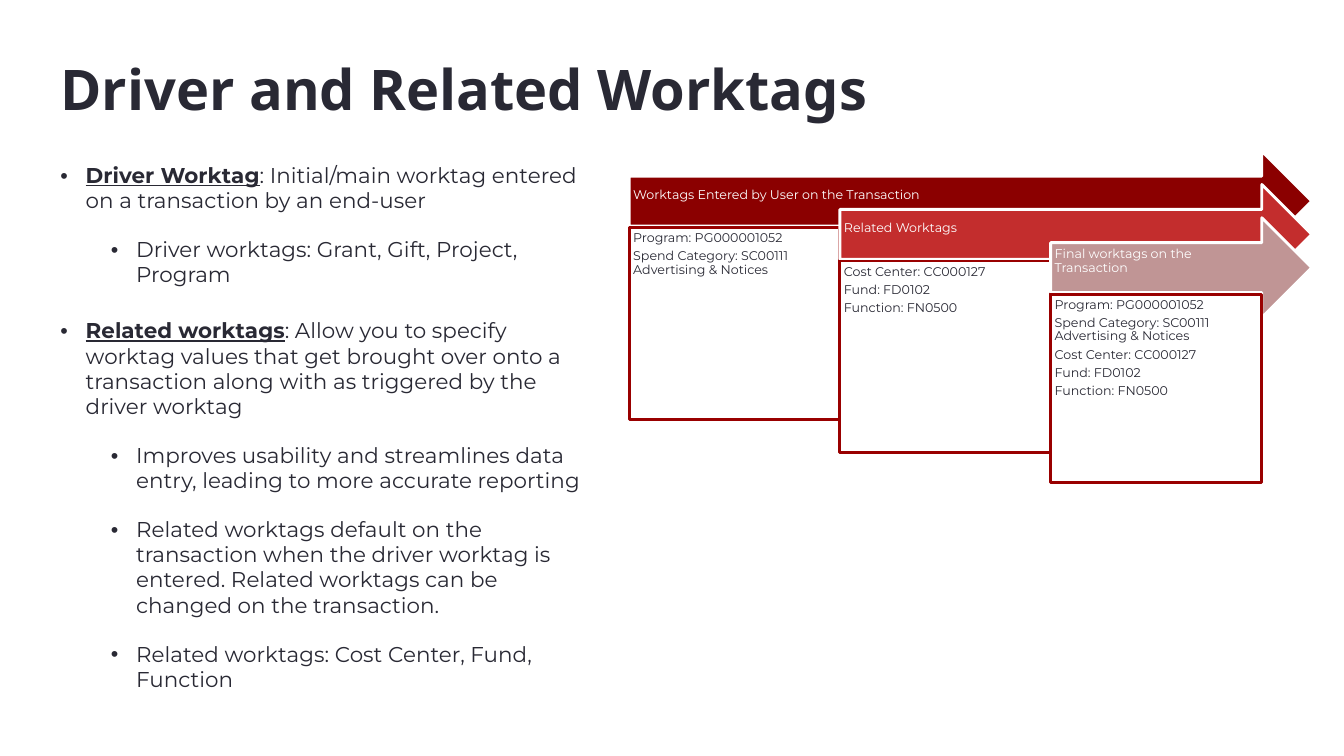
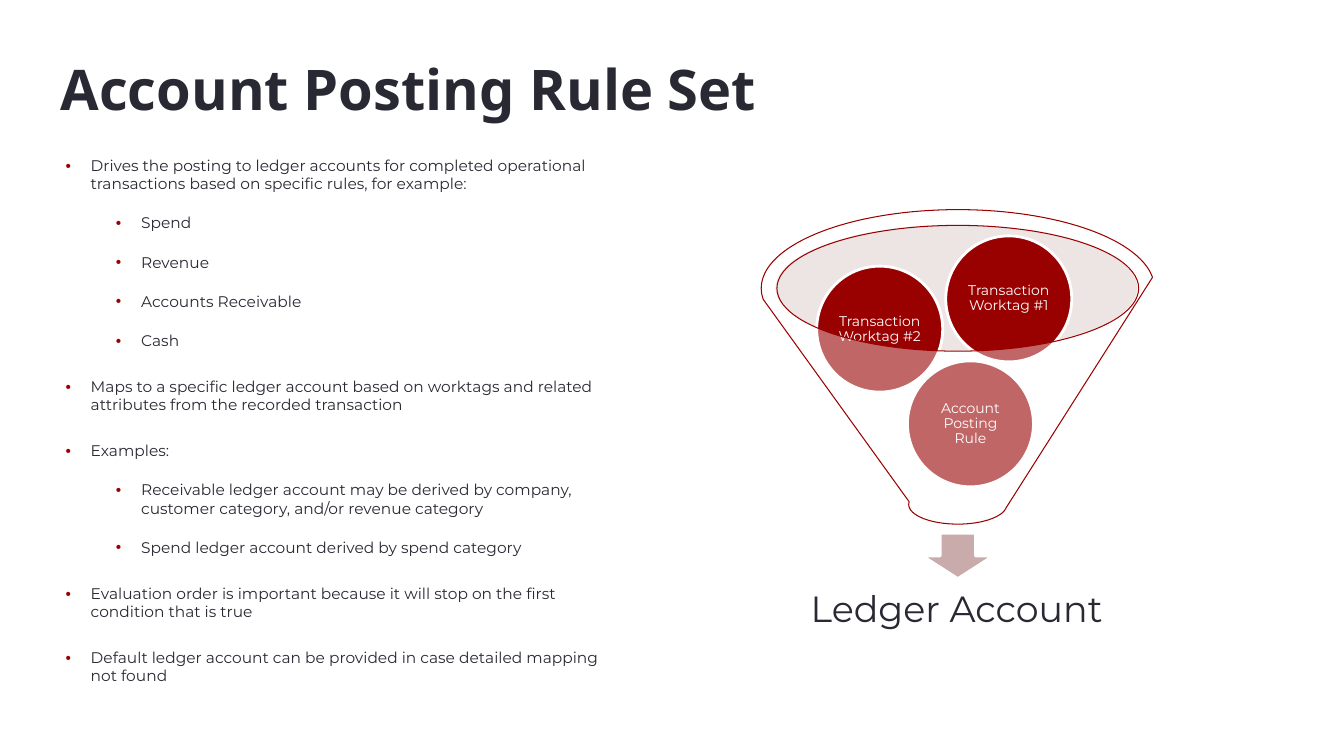
from lxml import etree
from pptx import Presentation
from pptx.dml.color import RGBColor
from pptx.enum.shapes import MSO_SHAPE
from pptx.enum.text import MSO_ANCHOR, MSO_AUTO_SIZE, PP_ALIGN
from pptx.oxml.ns import qn
from pptx.util import Inches, Pt

RECTANGLE, ELLIPSE = MSO_SHAPE.RECTANGLE, MSO_SHAPE.OVAL
RIGHT_ARROW, DOWN_ARROW = MSO_SHAPE.RIGHT_ARROW, MSO_SHAPE.DOWN_ARROW
FUNNEL = MSO_SHAPE.FUNNEL
TOP, MIDDLE = MSO_ANCHOR.TOP, MSO_ANCHOR.MIDDLE
LEFT, CENTER = PP_ALIGN.LEFT, PP_ALIGN.CENTER
NO_AUTOFIT = MSO_AUTO_SIZE.NONE
TITLE_LAYOUT = 1

COLORS = {
    "ink": "292934",
    "white": "FFFFFF",
    "red": "990000",
    "dark_red": "8B0000",
    "bright_red": "C32D2D",
    "dusty_red": "C09595",
    "pale_red": "CAABAB",
    "rim": "D4BDBD",
}
TITLE_FONT, BODY_FONT = "Noto Sans", "Montserrat"

WORKTAG_POINTS = [  # level, underlined lead, text
    (0, "Driver Worktag", ": Initial/main worktag entered on a transaction by an end-user"),
    (1, "", "Driver worktags: Grant, Gift, Project, Program"),
    (0, "Related worktags", ": Allow you to specify worktag values that get brought over onto "
        "a transaction along with as triggered by the driver worktag"),
    (1, "", "Improves usability and streamlines data entry, leading to more accurate reporting"),
    (1, "", "Related worktags default on the transaction when the driver worktag is entered. "
        "Related worktags can be changed on the transaction."),
    (1, "", "Related worktags: Cost Center, Fund, Function"),
]
USER_TAGS = ["Program: PG000001052", "Spend Category: SC00111 Advertising & Notices"]
RELATED_TAGS = ["Cost Center: CC000127", "Fund: FD0102", "Function: FN0500"]
STAGES = [  # heading, arrow color, worktags, box height
    ("Worktags Entered by User on the Transaction", "dark_red", USER_TAGS, 1.9),
    ("Related Worktags", "bright_red", RELATED_TAGS, 1.9),
    ("Final worktags on the Transaction", "dusty_red", USER_TAGS + RELATED_TAGS, 1.87),
]
POSTING_POINTS = [
    (0, "", "Drives the posting to ledger accounts for completed operational transactions "
        "based on specific rules, for example:"),
    (1, "", "Spend"),
    (1, "", "Revenue"),
    (1, "", "Accounts Receivable"),
    (1, "", "Cash"),
    (0, "", "Maps to a specific ledger account based on worktags and related attributes "
        "from the recorded transaction"),
    (0, "", "Examples:"),
    (1, "", "Receivable ledger account may be derived by company, customer category, "
        "and/or revenue category"),
    (1, "", "Spend ledger account derived by spend category"),
    (0, "", "Evaluation order is important because it will stop on the first condition "
        "that is true"),
    (0, "", "Default ledger account can be provided in case detailed mapping not found"),
]
FUNNEL_INPUTS = [
    ("Account Posting Rule", 9, 3.58),
    ("Transaction Worktag #2", 8.1, 2.64),
    ("Transaction Worktag #1", 9.38, 2.34),
]


def rgb(color):
    return RGBColor.from_string(COLORS[color])


class Deck:
    """Holds the shared style and the slide being filled."""

    def __init__(self):
        self.presentation = Presentation()
        self.presentation.slide_width = Inches(13.33)
        self.presentation.slide_height = Inches(7.5)
        self.slide = None

    def add_slide(self, title):
        layout = self.presentation.slide_layouts[TITLE_LAYOUT]
        self.slide = self.presentation.slides.add_slide(layout)
        heading = self.slide.shapes.title
        self.place(heading, 0.5, 0.5, 11.5, 0.83)
        heading.text_frame.text = title
        heading.text_frame.vertical_anchor = MIDDLE
        heading.text_frame.auto_size = NO_AUTOFIT
        paragraph = heading.text_frame.paragraphs[0]
        paragraph.alignment = LEFT
        paragraph.line_spacing = 0.9
        self.style_run(paragraph.runs[0], 40, font=TITLE_FONT, bold=True)

    def place(self, shape, left, top, width, height):
        shape.left, shape.top = Inches(left), Inches(top)
        shape.width, shape.height = Inches(width), Inches(height)

    def style_run(self, run, size, color="ink", font=BODY_FONT, bold=False, underline=False):
        run.font.size = Pt(size)
        run.font.name = font
        run.font.bold = bold
        run.font.underline = underline
        run.font.color.rgb = rgb(color)

    def bullet(self, paragraph, level, color):
        properties = paragraph._p.get_or_add_pPr()
        properties.set("marL", str(Inches(0.25 + 0.5 * level)))
        properties.set("indent", str(-Inches(0.25)))
        bullet_color = etree.SubElement(properties, qn("a:buClr"))
        etree.SubElement(bullet_color, qn("a:srgbClr"), val=COLORS[color])
        etree.SubElement(properties, qn("a:buFont"), typeface="Arial")
        etree.SubElement(properties, qn("a:buChar"), char="•")

    def bullets(self, points, box, size, space_after, bullet_color):
        body = self.slide.placeholders[1]
        self.place(body, *box)
        frame = body.text_frame
        frame.auto_size = NO_AUTOFIT
        for index, (level, lead, text) in enumerate(points):
            paragraph = frame.add_paragraph() if index else frame.paragraphs[0]
            paragraph.level = level
            self.bullet(paragraph, level, bullet_color)
            paragraph.line_spacing = 0.98
            paragraph.space_before = Pt((5 if level else 10) if index else 0)
            paragraph.space_after = Pt(space_after)
            for part in filter(None, (lead, text)):
                run = paragraph.add_run()
                run.text = part
                is_lead = part == lead
                self.style_run(run, size, bold=is_lead, underline=is_lead)

    def shape(self, kind, box, fill, line=None, line_width=2, opacity=None):
        shape = self.slide.shapes.add_shape(kind, *map(Inches, box))
        shape.shadow.inherit = False
        shape.fill.solid()
        shape.fill.fore_color.rgb = rgb(fill)
        if opacity:
            fill_color = shape._element.spPr.find(qn("a:solidFill"))[0]
            etree.SubElement(fill_color, qn("a:alpha"), val=str(opacity * 1000))
        if line:
            shape.line.color.rgb = rgb(line)
            shape.line.width = Pt(line_width)
        else:
            shape.line.fill.background()
        return shape

    def label(self, shape, lines, size, color, insets, anchor=MIDDLE, alignment=CENTER):
        """Write tightly set lines into a shape; insets run left, top, right, bottom."""
        frame = shape.text_frame
        frame.text = "\n".join(lines)
        frame.word_wrap = True
        frame.vertical_anchor = anchor
        (frame.margin_left, frame.margin_top,
         frame.margin_right, frame.margin_bottom) = map(Inches, insets)
        for paragraph in frame.paragraphs:
            paragraph.alignment = alignment
            paragraph.line_spacing = 0.9
            paragraph.space_after = Pt(size * 0.35)
            self.style_run(paragraph.runs[0], size, color)

    def caption(self, text, box, size):
        textbox = self.slide.shapes.add_textbox(*map(Inches, box))
        self.label(textbox, [text], size, "ink", [0.2] * 4)


def worktags_slide(deck):
    deck.add_slide("Driver and Related Worktags")
    deck.bullets(WORKTAG_POINTS, (0.5, 1.57, 5.54, 5.47), 15.3, 12, "ink")
    box_width, arrow_tip = 2.09, 13.01
    for index, (heading, color, worktags, box_height) in enumerate(STAGES):
        left, top = 6.24 + index * box_width, 1.5 + index * 0.33
        arrow = deck.shape(RIGHT_ARROW, (left, top, arrow_tip - left, 0.99), color, "white")
        deck.label(arrow, [heading], 9, "white", (0.04, 0.04, 0.28, 0.16), alignment=LEFT)
        details = deck.shape(RECTANGLE, (left, top + 0.76, box_width, box_height),
                             "white", "red")
        deck.label(details, worktags, 9, "ink", [0.04] * 4, TOP, LEFT)


def posting_rules_slide(deck):
    deck.add_slide("Account Posting Rule Set")
    deck.bullets(POSTING_POINTS, (0.55, 1.51, 5.56, 5.4), 11, 10, "red")
    deck.shape(ELLIPSE, (7.69, 2.23, 3.59, 1.25), "rim", opacity=40)
    deck.shape(DOWN_ARROW, (9.15, 5.29, 0.7, 0.45), "pale_red", "white")
    deck.caption("Ledger Account", (7.82, 5.64, 3.34, 0.84), 26)
    for text, left, top in FUNNEL_INPUTS:
        circle = deck.shape(ELLIPSE, (left, top, 1.25, 1.25), "red", "white")
        deck.label(circle, [text], 10, "white", [0.01] * 4)
    deck.shape(FUNNEL, (7.55, 2.08, 3.9, 3.12), "white", "red", 0.75, opacity=40)


def main():
    deck = Deck()
    worktags_slide(deck)
    posting_rules_slide(deck)
    deck.presentation.save("out.pptx")


if __name__ == "__main__":
    main()
